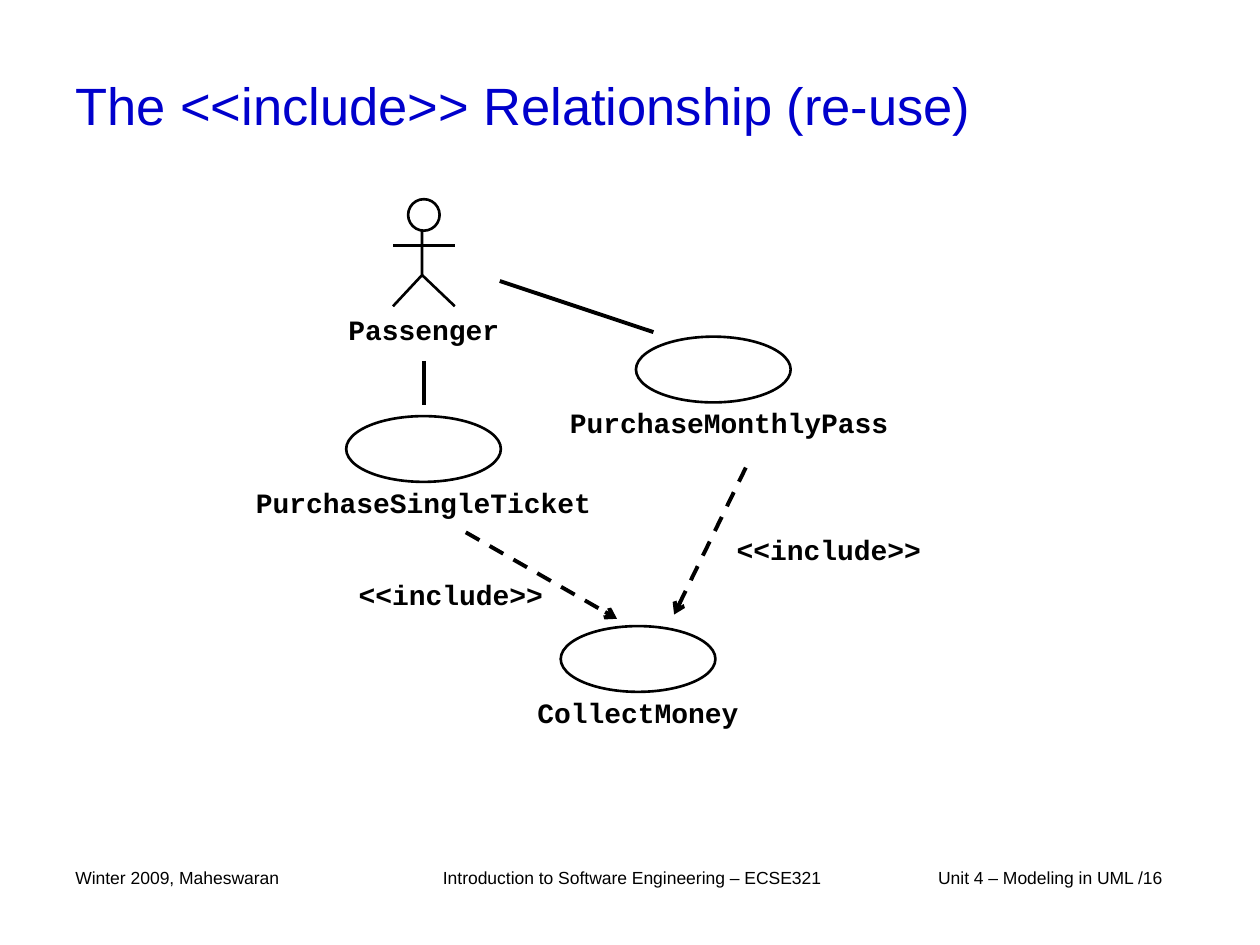
import dataclasses
import pptx
import pptx.util
import pptx.dml.color
import pptx.enum.dml
import pptx.enum.shapes
import pptx.enum.text
import pptx.oxml

Pt = pptx.util.Pt
Align = pptx.enum.text.PP_ALIGN
Anchor = pptx.enum.text.MSO_ANCHOR
OVAL = pptx.enum.shapes.MSO_SHAPE.OVAL
STRAIGHT = pptx.enum.shapes.MSO_CONNECTOR.STRAIGHT


@dataclasses.dataclass(frozen=True)
class Theme:
    ink: str = "000000"
    title: str = "0000CC"
    paper: str = "FFFFFF"
    sans: str = "Arial"
    mono: str = "Courier New"
    head: float = 30
    body: float = 16
    foot: float = 10
    thin: float = 1.5
    thick: float = 2.25
    char: float = 9.6  # width of one letter of the mono font at body size


THEME = Theme()


def color(code):
    return pptx.dml.color.RGBColor.from_string(code)


def stroke(line, width):
    line.color.rgb = color(THEME.ink)
    line.width = Pt(width)


def write(shapes, words, box, size, font=THEME.sans, ink=THEME.ink, bold=False):
    item = shapes.add_textbox(*map(Pt, box))
    frame = item.text_frame
    frame.word_wrap = True
    frame.text = words
    face = frame.paragraphs[0].runs[0].font
    face.name, face.size, face.bold = font, Pt(size), bold
    face.color.rgb = color(ink)
    return frame


def label(shapes, words, mid, top):
    """Bold mono text centred on mid, with no margins."""
    wide = THEME.char * len(words)
    frame = write(shapes, words, (mid - wide / 2, top, wide, 19.4),
                  THEME.body, THEME.mono, bold=True)
    frame.word_wrap = False
    frame.auto_size = pptx.enum.text.MSO_AUTO_SIZE.SHAPE_TO_FIT_TEXT
    frame.margin_left = frame.margin_right = 0
    frame.margin_top = frame.margin_bottom = 0
    frame.paragraphs[0].alignment = Align.CENTER


def link(shapes, start, end, width=THEME.thick):
    line = shapes.add_connector(STRAIGHT, *map(Pt, (*start, *end)))
    stroke(line.line, width)
    props = line._element.spPr
    props.append(pptx.oxml.parse_xml(
        '<a:effectLst xmlns:a="http://schemas.openxmlformats.org/drawingml/2006/main"/>'))
    return line


def include(shapes, start, end, mid, top):
    """Dashed arrow with its stereotype label."""
    line = link(shapes, start, end).line
    line.dash_style = pptx.enum.dml.MSO_LINE.DASH
    line._get_or_add_ln().append(pptx.oxml.parse_xml(
        '<a:tailEnd xmlns:a="http://schemas.openxmlformats.org/drawingml/2006/main"'
        ' type="arrow"/>'))
    label(shapes, "<<include>>", mid, top)


def oval(shapes, box):
    item = shapes.add_shape(OVAL, *map(Pt, box))
    item.shadow.inherit = False
    item.fill.background()
    stroke(item.line, THEME.thin)
    return item


def actor(shapes, words, left, top):
    parts = shapes.add_group_shape().shapes
    neck, hip, foot, wide = left + 16.6, top + 43.4, top + 61.2, 35.3
    pen = parts.build_freeform(Pt(neck), Pt(top + 12.2))
    pen.add_line_segments([(Pt(neck), Pt(hip)), (Pt(left), Pt(foot))], close=False)
    body = pen.convert_to_shape()
    body.shadow.inherit = False
    body.fill.background()
    stroke(body.line, THEME.thin)
    arms = top + 26.6
    link(parts, (neck, hip), (left + wide, foot), THEME.thin)
    link(parts, (left, arms), (left + wide, arms), THEME.thin)
    face = oval(parts, (left + 8.6, top, 18, 18))
    face.fill.solid()
    face.fill.fore_color.rgb = color(THEME.paper)
    label(parts, words, left + wide / 2, top + 64.8)


def case(shapes, words, left, top, shift=0):
    """Use case: an ellipse with its name below, moved right by shift."""
    parts = shapes.add_group_shape().shapes
    wide, high = 88.4, 37.6
    oval(parts, (left, top, wide, high))
    label(parts, words, left + wide / 2 + shift, top + 39.6)


def diagram(shapes, left, top):
    def at(x, y):
        return left + x, top + y

    actor(shapes, "Passenger", *at(78.6, 0))
    case(shapes, "PurchaseSingleTicket", *at(51.8, 124))
    case(shapes, "PurchaseMonthlyPass", *at(217.4, 78.6), shift=9)
    case(shapes, "CollectMoney", *at(174.4, 244))
    link(shapes, at(96.2, 92.4), at(96.2, 117.8))
    link(shapes, at(139.6, 46.8), at(227.4, 76))
    include(shapes, at(280.2, 153.4), at(239.2, 237.4), *at(327.6, 190.4))
    include(shapes, at(120.2, 190.4), at(206.6, 239.8), *at(111.6, 216.2))


def title(shapes, words, box):
    frame = write(shapes, words, box, THEME.head, ink=THEME.title)
    frame.vertical_anchor = Anchor.MIDDLE


def footer(shapes, top):
    for words, left, wide in (
            ("Winter 2009, Maheswaran", 36, 168),
            ("Introduction to Software Engineering – ECSE321", 246, 240),
            ("Unit 4 – Modeling in UML /16", 529, 155)):
        write(shapes, words, (left, top, wide, 36), THEME.foot)


def main():
    deck = pptx.Presentation()
    deck.slide_width, deck.slide_height = Pt(720), Pt(540)
    shapes = deck.slides.add_slide(deck.slide_layouts[6]).shapes
    title(shapes, "The <<include>> Relationship (re-use)", (36, 24, 648, 72))
    diagram(shapes, 146, 113.8)
    footer(shapes, 492)
    deck.save("out.pptx")


if __name__ == "__main__":
    main()
